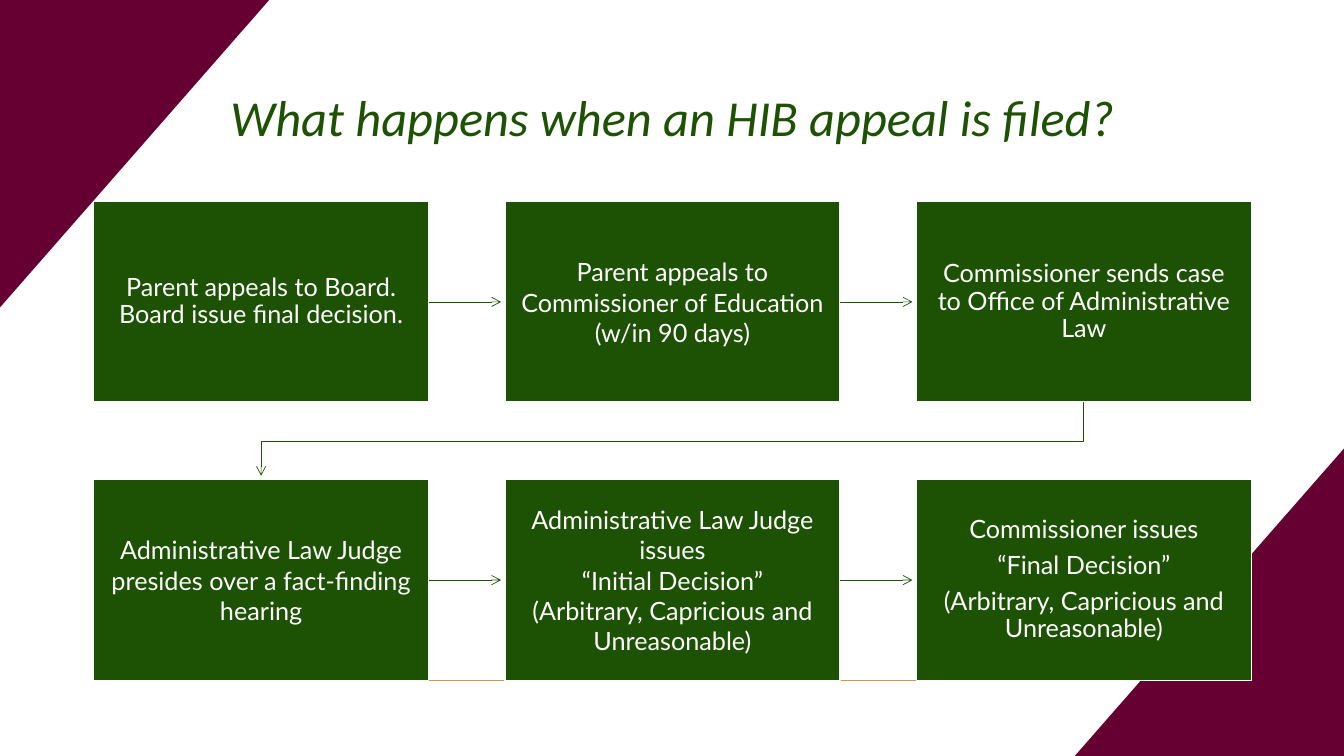
from pptx import Presentation
from pptx.dml.color import RGBColor
from pptx.enum.shapes import MSO_CONNECTOR, MSO_SHAPE
from pptx.enum.text import MSO_ANCHOR, MSO_AUTO_SIZE, PP_ALIGN
from pptx.oxml.ns import qn
from pptx.util import Inches, Pt
from lxml.etree import SubElement

COLORS = {"green": "1D5103", "maroon": "660033", "gold": "CE974E", "white": "FFFFFF"}

# Grid of steps, in inches
LEFT, TOP = 0.93, 2.0
BOX_W, BOX_H = 3.32, 1.99
STEP_X, STEP_Y = 4.08, 2.76
ARROW_GAP = 0.04

# Paragraphs of each step, and whether its lines are set tight
STEPS = [
    (["Parent appeals to Board. Board issue final decision."], True),
    (["Parent appeals to Commissioner of Education", "(w/in 90 days)"], False),
    (["Commissioner sends case to Office of Administrative Law"], True),
    (["Administrative Law Judge presides over a fact-finding hearing"], False),
    (["Administrative Law Judge issues", "“Initial Decision”",
      "(Arbitrary, Capricious and Unreasonable)"], False),
    (["Commissioner issues", "“Final Decision”",
      "(Arbitrary, Capricious and Unreasonable)"], True),
]


def rgb(name):
    return RGBColor.from_string(COLORS[name])


def style_line(sp, color, width, arrow=False):
    sp.line.color.rgb = rgb(color)
    sp.line.width = Pt(width)
    if arrow:
        SubElement(sp.line._get_or_add_ln(), qn("a:tailEnd"), type="arrow")


def add_path(slide, points, close):
    points = [(Inches(x), Inches(y)) for x, y in points]
    builder = slide.shapes.build_freeform(*points[0], scale=1.0)
    builder.add_line_segments(points[1:], close=close)
    sp = builder.convert_to_shape()
    sp.shadow.inherit = False
    return sp


def add_corner(slide, points):
    sp = add_path(slide, points, close=True)
    sp.fill.solid()
    sp.fill.fore_color.rgb = rgb("maroon")
    sp.line.fill.background()


def add_line(slide, x1, y1, x2, y2, color, width, arrow=False):
    line = slide.shapes.add_connector(
        MSO_CONNECTOR.STRAIGHT, Inches(x1), Inches(y1), Inches(x2), Inches(y2))
    style_line(line, color, width, arrow)
    SubElement(line._element.spPr, qn("a:effectLst"))
    return line


def add_title(slide, text):
    title = slide.shapes.title
    title.left, title.top = Inches(0.92), Inches(0.43)
    title.width, title.height = Inches(11.5), Inches(1.45)
    tf = title.text_frame
    tf.text = text
    tf.auto_size = MSO_AUTO_SIZE.NONE
    tf.vertical_anchor = MSO_ANCHOR.MIDDLE
    p = tf.paragraphs[0]
    p.alignment = PP_ALIGN.CENTER
    p.font.name, p.font.size = "Calibri", Pt(36)
    p.font.italic, p.font.bold = True, False
    p.font.color.rgb = rgb("green")


def add_step(slide, x, y, paragraphs, tight):
    sp = slide.shapes.add_shape(
        MSO_SHAPE.RECTANGLE, Inches(x), Inches(y), Inches(BOX_W), Inches(BOX_H))
    sp.shadow.inherit = False
    sp.fill.solid()
    sp.fill.fore_color.rgb = rgb("green")
    style_line(sp, "white", 1)
    tf = sp.text_frame
    tf.word_wrap = True
    tf.vertical_anchor = MSO_ANCHOR.MIDDLE
    tf.margin_left = tf.margin_right = Inches(0.14)
    tf.margin_top = tf.margin_bottom = Inches(0.14)
    tf.text = "\n".join(paragraphs)
    for p in tf.paragraphs:
        p.alignment = PP_ALIGN.CENTER
        p.font.name, p.font.size = "Lato", Pt(18)
        p.font.color.rgb = rgb("white")
        if tight:
            p.line_spacing = 0.9
            p.space_after = Pt(6.3)
    return sp


def main():
    prs = Presentation()
    prs.slide_width, prs.slide_height = Inches(13.33), Inches(7.5)
    slide = prs.slides.add_slide(prs.slide_layouts[5])

    # Corners, base line and title
    add_corner(slide, [(13.33, 4.45), (13.33, 7.5), (10.66, 7.5)])
    add_corner(slide, [(0, 3.05), (0, 0), (2.67, 0)])
    add_line(slide, 1.35, 6.75, 12.02, 6.75, "gold", 1)
    add_title(slide, "What happens when an HIB appeal is filed?")

    # Steps, with an arrow from each to the next in its row
    for i, (paragraphs, tight) in enumerate(STEPS):
        row, col = divmod(i, 3)
        x, y = LEFT + col * STEP_X, TOP + row * STEP_Y
        box = add_step(slide, x, y, paragraphs, tight)
        if col < 2:
            mid = y + BOX_H / 2
            arrow = add_line(slide, x + BOX_W, mid, x + STEP_X - ARROW_GAP, mid,
                             "green", 0.5, arrow=True)
            arrow.begin_connect(box, 3)

    # Bent arrow from the end of the first row to the second
    start_x, end_x = LEFT + 2 * STEP_X + BOX_W / 2, LEFT + BOX_W / 2
    row_end, next_row = TOP + BOX_H, TOP + STEP_Y
    bend = (row_end + next_row) / 2
    turn = add_path(slide, [(start_x, row_end), (start_x, bend), (end_x, bend),
                            (end_x, next_row - ARROW_GAP)], close=False)
    turn.fill.background()
    style_line(turn, "green", 0.5, arrow=True)

    prs.save("out.pptx")


if __name__ == "__main__":
    main()
